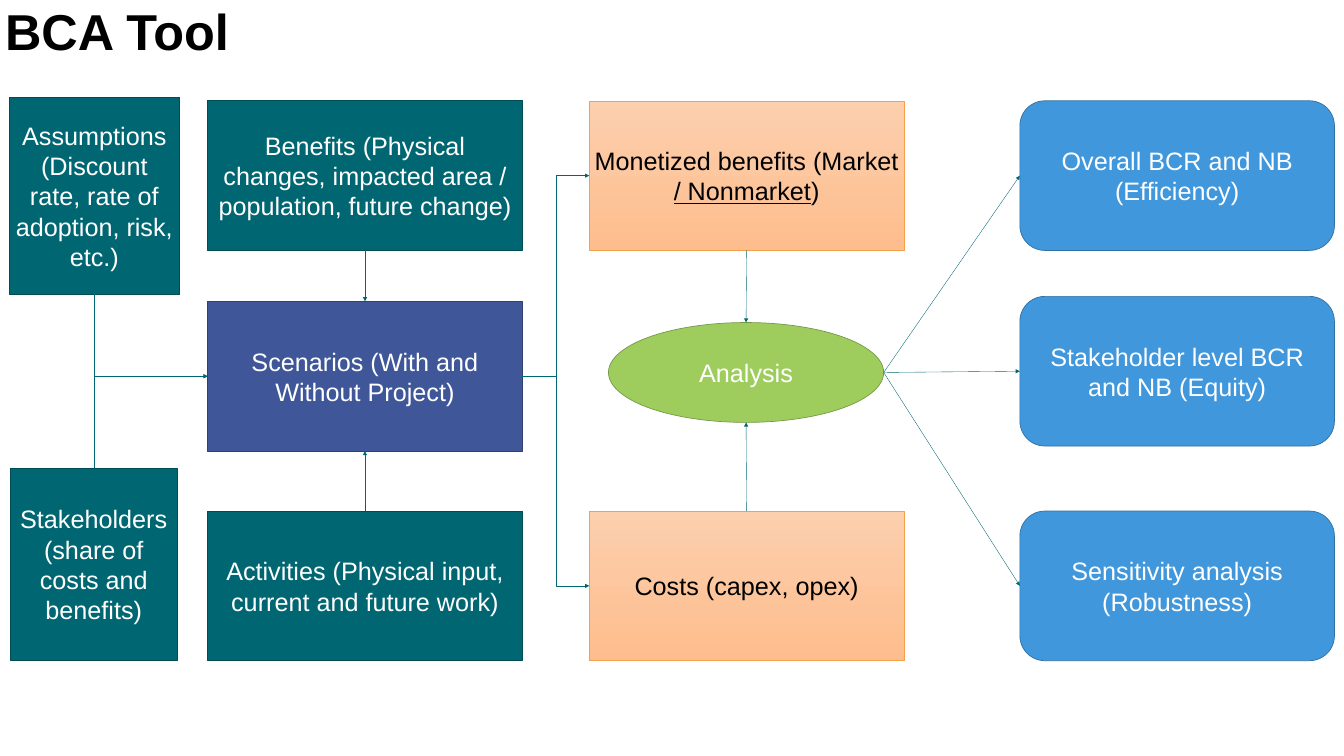
from lxml import etree
from pptx import Presentation
from pptx import util as u
from pptx.dml.color import RGBColor
from pptx.enum import shapes, text
from pptx.oxml import ns

WHITE = RGBColor(0xFF, 0xFF, 0xFF)
BLACK = RGBColor(0, 0, 0)
TEAL, TEAL_EDGE = RGBColor(0x00, 0x67, 0x72), RGBColor(0x00, 0x4C, 0x54)
INDIGO, INDIGO_EDGE = RGBColor(0x3F, 0x57, 0x99), RGBColor(0x2F, 0x40, 0x71)
BLUE, BLUE_EDGE = RGBColor(0x40, 0x97, 0xDB), RGBColor(0x2F, 0x70, 0xA2)
GREEN, GREEN_EDGE = RGBColor(0x9E, 0xCD, 0x5E), RGBColor(0x75, 0x98, 0x46)
PEACH = (RGBColor(0xFC, 0xCF, 0xAE), RGBColor(0xFE, 0xBD, 0x8D))
PEACH_EDGE = RGBColor(0xF6, 0xA0, 0x4D)

RECT = shapes.MSO_SHAPE.RECTANGLE
ROUND = shapes.MSO_SHAPE.ROUNDED_RECTANGLE
OVAL = shapes.MSO_SHAPE.OVAL
SIDES = ("top", "left", "bottom", "right")

# Grid in points
BOX_WIDTH, BOX_HEIGHT = 449.3, 213.8
INPUTS, VALUES, RESULTS = 296.6, 841.7, 1456.6
TOP_ROW, BOTTOM_ROW = 144, 730.1


def write(frame, content, size=36, color=WHITE, bold=False,
          align=text.PP_ALIGN.CENTER):
    """Fill a frame with one paragraph; content is a string or (words, underline) pairs."""
    frame.word_wrap = True
    frame.vertical_anchor = text.MSO_ANCHOR.MIDDLE
    para = frame.paragraphs[0]
    para.alignment = align
    spans = [(content, False)] if isinstance(content, str) else content
    for words, underline in spans:
        span = para.add_run()
        span.text = words
        font = span.font
        font.name, font.size, font.bold = "Arial", u.Pt(size), bold
        font.color.rgb = color
        if underline:
            font.underline = True


def side_point(box, side):
    x = {"left": 0, "right": box.width}.get(side, box.width // 2)
    y = {"top": 0, "bottom": box.height}.get(side, box.height // 2)
    return box.left + x, box.top + y


class Diagram:
    def __init__(self, page):
        self.page = page

    def title(self, words):
        title = self.page.shapes.title
        title.left, title.top = u.Pt(0), u.Pt(-31.7)
        title.width, title.height = u.Pt(1655.3), u.Pt(162)
        write(title.text_frame, words, size=72, color=BLACK, bold=True,
              align=text.PP_ALIGN.LEFT)
        title.text_frame.paragraphs[0].line_spacing = 0.9

    def box(self, content, left, top, width=BOX_WIDTH, height=BOX_HEIGHT,
            kind=RECT, fill=TEAL, edge=TEAL_EDGE, edge_width=1, color=WHITE):
        box = self.page.shapes.add_shape(
            kind, u.Pt(left), u.Pt(top), u.Pt(width), u.Pt(height))
        box.shadow.inherit = False
        if isinstance(fill, RGBColor):
            box.fill.solid()
            box.fill.fore_color.rgb = fill
        else:
            box.fill.gradient()
            box.fill.gradient_angle = 270
            for stop, shade in zip(box.fill.gradient_stops, fill):
                stop.color.rgb = shade
        box.line.color.rgb = edge
        box.line.width = u.Pt(edge_width)
        write(box.text_frame, content, color=color)
        return box

    def arrow(self, start, start_side, end, end_side, kind="straight"):
        x1, y1 = side_point(start, start_side)
        x2, y2 = side_point(end, end_side)
        if kind == "corner":
            # One bend, vertical first: a box of swapped sides, turned by 270 degrees
            middle_x, middle_y, dx, dy = (x1 + x2) // 2, (y1 + y2) // 2, x2 - x1, y2 - y1
            x1, x2 = middle_x + dy // 2, middle_x - dy // 2
            y1, y2 = middle_y - dx // 2, middle_y + dx // 2
        route = shapes.MSO_CONNECTOR.STRAIGHT if kind == "straight" else shapes.MSO_CONNECTOR.ELBOW
        arrow = self.page.shapes.add_connector(route, x1, y1, x2, y2)
        arrow.line.color.rgb = TEAL
        arrow.line.width = u.Pt(0.5)
        properties = arrow.element.spPr
        if kind == "corner":
            properties.find(ns.qn("a:xfrm")).set("rot", str(270 * 60000))
            properties.find(ns.qn("a:prstGeom")).set("prst", "bentConnector2")
        etree.SubElement(properties.find(ns.qn("a:ln")), ns.qn("a:tailEnd"), type="triangle")
        etree.SubElement(properties, ns.qn("a:effectLst"))
        # Glue both ends; an oval has twice as many connection sites
        links = arrow.element.find(".//" + ns.qn("p:cNvCxnSpPr"))
        for tag, box, side in (("a:stCxn", start, start_side), ("a:endCxn", end, end_side)):
            step = 2 if box.auto_shape_type == OVAL else 1
            etree.SubElement(links, ns.qn(tag), id=str(box.shape_id),
                             idx=str(SIDES.index(side) * step))


def main():
    deck = Presentation()
    deck.slide_width, deck.slide_height = u.Pt(1919.5), u.Pt(1080)
    diagram = Diagram(deck.slides.add_slide(deck.slide_layouts[5]))
    diagram.title("BCA Tool")

    # Inputs and scenarios
    assumptions = diagram.box("Assumptions (Discount rate, rate of adoption, risk, etc.)",
                              13, 139, 243.4, 281.5)
    stakeholders = diagram.box("Stakeholders (share of costs and benefits)",
                               15.1, 668.9, 237.6, 274.3)
    benefits = diagram.box(
        "Benefits (Physical changes, impacted area / population, future change)",
        INPUTS, TOP_ROW)
    activities = diagram.box("Activities (Physical input, current and future work)",
                             INPUTS, BOTTOM_ROW)
    scenarios = diagram.box("Scenarios (With and Without Project)", INPUTS, 430.6,
                            fill=INDIGO, edge=INDIGO_EDGE)

    # Monetary values and analysis
    peach = dict(fill=PEACH, edge=PEACH_EDGE, edge_width=0.5, color=BLACK)
    monetized = diagram.box(
        [("Monetized benefits (Market ", False), ("/ Nonmarket", True), (")", False)],
        VALUES, TOP_ROW, **peach)
    costs = diagram.box("Costs (capex, opex)", VALUES, BOTTOM_ROW, **peach)
    analysis = diagram.box("Analysis", 869, 460.8, 393.1, 142.6, kind=OVAL,
                           fill=GREEN, edge=GREEN_EDGE)

    # Results
    results = [
        diagram.box(words, RESULTS, top, kind=ROUND, fill=BLUE, edge=BLUE_EDGE)
        for words, top in (("Overall BCR and NB (Efficiency)", TOP_ROW),
                           ("Stakeholder level BCR and NB (Equity)", 423.4),
                           ("Sensitivity analysis (Robustness)", BOTTOM_ROW))
    ]

    # Flow
    diagram.arrow(assumptions, "bottom", scenarios, "left", "corner")
    diagram.arrow(stakeholders, "top", scenarios, "left", "corner")
    for upper, lower, target in ((benefits, activities, scenarios),
                                 (monetized, costs, analysis)):
        diagram.arrow(upper, "bottom", target, "top")
        diagram.arrow(lower, "top", target, "bottom")
    for value in (monetized, costs):
        diagram.arrow(scenarios, "right", value, "left", "elbow")
    for result in results:
        diagram.arrow(analysis, "right", result, "left")

    deck.save("out.pptx")


if __name__ == "__main__":
    main()
